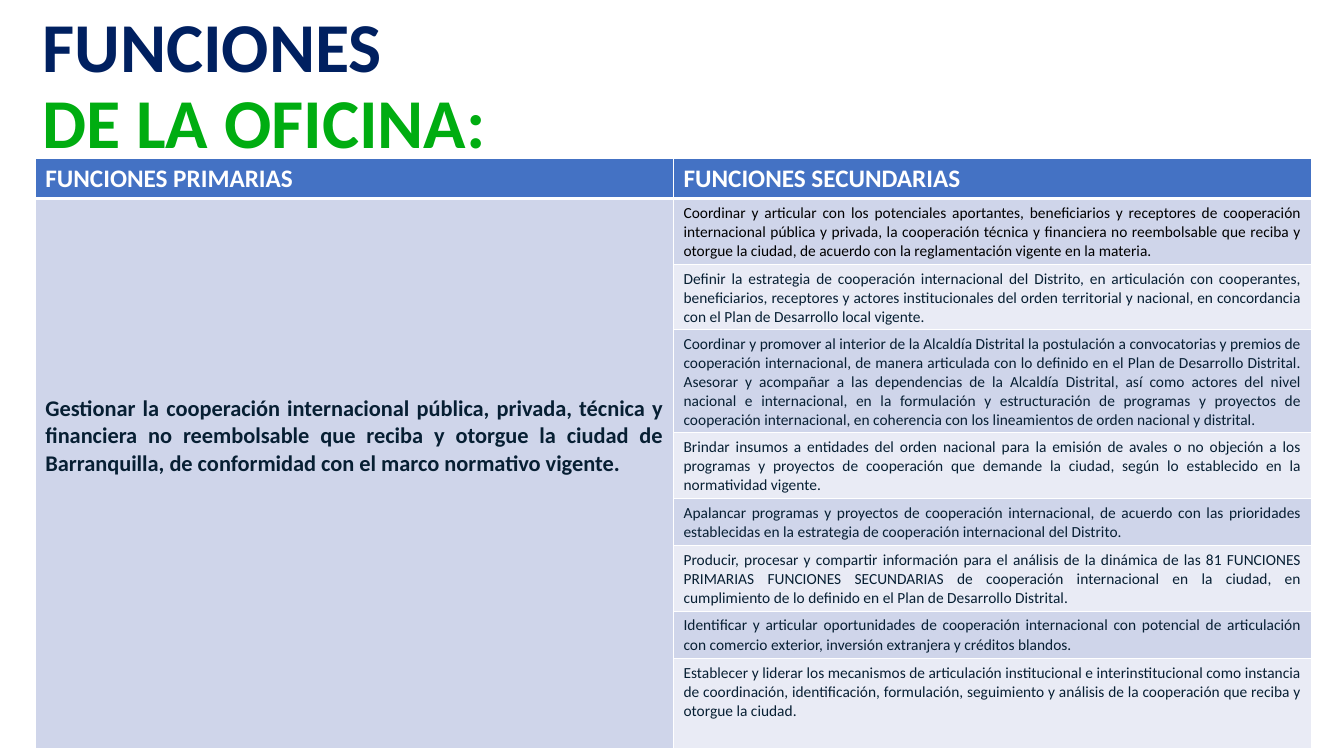
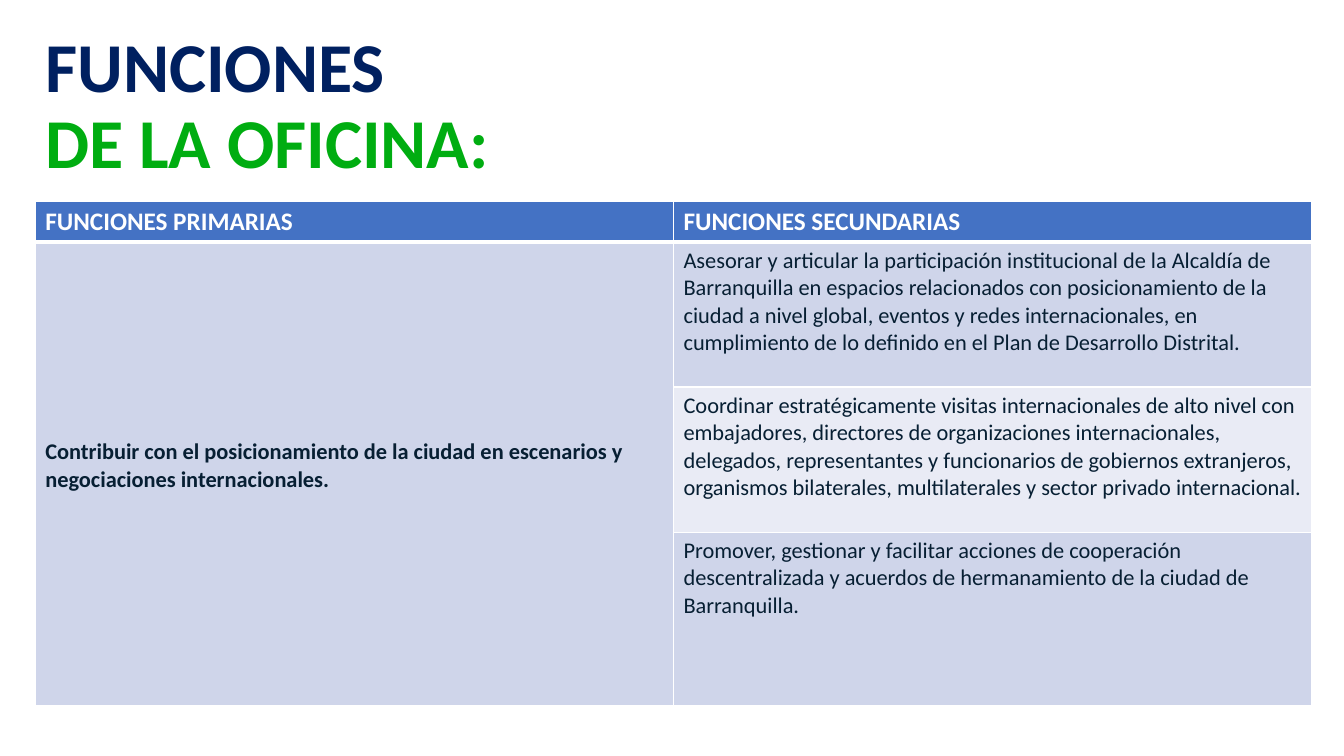
from lxml.etree import SubElement
from pptx import Presentation
from pptx.dml.color import RGBColor
from pptx.enum.text import MSO_ANCHOR, MSO_AUTO_SIZE, PP_ALIGN
from pptx.oxml.ns import qn
from pptx.util import Inches, Pt

TITLE_ONLY = 5
HEADERS = ("FUNCIONES PRIMARIAS", "FUNCIONES SECUNDARIAS")
HEADER_HEIGHT = 0.38

COOPERATION = (
    "Gestionar la cooperación internacional pública, privada, técnica y financiera no reembolsable que reciba y "
    "otorgue la ciudad de Barranquilla, de conformidad con el marco normativo vigente."
)
# Each secondary function: row height in inches, text
COOPERATION_TASKS = [
    (0.65, "Coordinar y articular con los potenciales aportantes, beneficiarios y receptores de cooperación "
           "internacional pública y privada, la cooperación técnica y financiera no reembolsable que reciba y "
           "otorgue la ciudad, de acuerdo con la reglamentación vigente en la materia."),
    (0.65, "Definir la estrategia de cooperación internacional del Distrito, en articulación con cooperantes, "
           "beneficiarios, receptores y actores institucionales del orden territorial y nacional, en concordancia "
           "con el Plan de Desarrollo local vigente."),
    (1.02, "Coordinar y promover al interior de la Alcaldía Distrital la postulación a convocatorias y premios de "
           "cooperación internacional, de manera articulada con lo definido en el Plan de Desarrollo Distrital. "
           "Asesorar y acompañar a las dependencias de la Alcaldía Distrital, así como actores del nivel nacional e "
           "internacional, en la formulación y estructuración de programas y proyectos de cooperación "
           "internacional, en coherencia con los lineamientos de orden nacional y distrital."),
    (0.65, "Brindar insumos a entidades del orden nacional para la emisión de avales o no objeción a los programas y "
           "proyectos de cooperación que demande la ciudad, según lo establecido en la normatividad vigente."),
    (0.47, "Apalancar programas y proyectos de cooperación internacional, de acuerdo con las prioridades "
           "establecidas en la estrategia de cooperación internacional del Distrito."),
    (0.65, "Producir, procesar y compartir información para el análisis de la dinámica de las 81 FUNCIONES PRIMARIAS "
           "FUNCIONES SECUNDARIAS de cooperación internacional en la ciudad, en cumplimiento de lo definido en el "
           "Plan de Desarrollo Distrital."),
    (0.47, "Identificar y articular oportunidades de cooperación internacional con potencial de articulación con "
           "comercio exterior, inversión extranjera y créditos blandos."),
    (0.89, "Establecer y liderar los mecanismos de articulación institucional e interinstitucional como instancia de "
           "coordinación, identificación, formulación, seguimiento y análisis de la cooperación que reciba y "
           "otorgue la ciudad."),
]

POSITIONING = "Contribuir con el posicionamiento de la ciudad en escenarios y negociaciones internacionales."
POSITIONING_TASKS = [
    (1.44, "Asesorar y articular la participación institucional de la Alcaldía de Barranquilla en espacios "
           "relacionados con posicionamiento de la ciudad a nivel global, eventos y redes internacionales, en "
           "cumplimiento de lo definido en el Plan de Desarrollo Distrital."),
    (1.44, "Coordinar estratégicamente visitas internacionales de alto nivel con embajadores, directores de "
           "organizaciones internacionales, delegados, representantes y funcionarios de gobiernos extranjeros, "
           "organismos bilaterales, multilaterales y sector privado internacional."),
    (1.72, "Promover, gestionar y facilitar acciones de cooperación descentralizada y acuerdos de hermanamiento de "
           "la ciudad de Barranquilla."),
]


def rgb(color):
    return RGBColor.from_string(color)


class Deck:
    FONT = "Calibri"
    NAVY, GREEN = "002060", "00AD11"
    INK, BLACK, WHITE = "071F33", "000000", "FFFFFF"
    HEADER_FILL = "4472C4"
    BANDS = ("CFD5EA", "E9EBF5")

    def __init__(self):
        self.presentation = Presentation()
        self.presentation.slide_width = Inches(13.33)
        self.presentation.slide_height = Inches(7.5)
        self.slide = None

    def add_slide(self):
        layout = self.presentation.slide_layouts[TITLE_ONLY]
        self.slide = self.presentation.slides.add_slide(layout)

    def add_run(self, paragraph, text, size, color, bold=False):
        run = paragraph.add_run()
        run.text = text
        font = run.font
        font.name, font.size, font.bold = self.FONT, Pt(size), bold
        font.color.rgb = rgb(color)

    def add_title(self, left, top):
        title = self.slide.shapes.title
        title.left, title.top = Inches(left), Inches(top)
        title.width, title.height = Inches(11.5), Inches(1.62)
        frame = title.text_frame
        frame.vertical_anchor = MSO_ANCHOR.MIDDLE
        frame.auto_size = MSO_AUTO_SIZE.SHAPE_TO_FIT_TEXT
        paragraph = frame.paragraphs[0]
        paragraph.alignment = PP_ALIGN.LEFT
        paragraph.line_spacing = 0.9
        self.add_run(paragraph, "FUNCIONES", 50, self.NAVY, True)
        paragraph.add_line_break()
        self.add_run(paragraph, "DE LA OFICINA:", 50, self.GREEN, True)

    def style_cell(self, cell, fill, top=1, bottom=1):
        """Fill the cell and give it white borders; top and bottom are widths in points."""
        properties = cell._tc.get_or_add_tcPr()
        for side, width in (("L", 1), ("R", 1), ("T", top), ("B", bottom)):
            border = SubElement(properties, qn(f"a:ln{side}"), w=str(Pt(width)))
            solid = SubElement(border, qn("a:solidFill"))
            SubElement(solid, qn("a:srgbClr"), val=self.WHITE)
        cell.fill.solid()
        cell.fill.fore_color.rgb = rgb(fill)

    def write_cell(self, cell, text, size, color, bold=False, align=PP_ALIGN.LEFT):
        paragraph = cell.text_frame.paragraphs[0]
        paragraph.alignment = align
        self.add_run(paragraph, text, size, color, bold)

    def add_functions(self, top, primary, tasks, task_size, align, first_color=INK):
        """Table with one primary function beside its secondary functions."""
        heights = [HEADER_HEIGHT] + [height for height, _ in tasks]
        table = self.slide.shapes.add_table(
            len(heights), 2, Inches(0.35), Inches(top), Inches(12.66), Inches(sum(heights))
        ).table
        for row, height in zip(table.rows, heights):
            row.height = Inches(height)
        for column, header in enumerate(HEADERS):
            cell = table.cell(0, column)
            self.style_cell(cell, self.HEADER_FILL, bottom=3)
            self.write_cell(cell, header, 18, self.WHITE, True)
        for row, (_, task) in enumerate(tasks, 1):
            top_border = 3 if row == 1 else 1
            self.style_cell(table.cell(row, 0), self.BANDS[0], top_border)
            cell = table.cell(row, 1)
            self.style_cell(cell, self.BANDS[(row - 1) % 2], top_border)
            color = first_color if row == 1 else self.INK
            self.write_cell(cell, task, task_size, color, align=align)
        primary_cell = table.cell(1, 0)
        primary_cell.merge(table.cell(len(tasks), 0))
        primary_cell.margin_top = Inches(1.95)
        self.write_cell(primary_cell, primary, 16, self.INK, True, align)


def main():
    deck = Deck()

    deck.add_slide()
    deck.add_title(0.32, 0.06)
    deck.add_functions(1.57, COOPERATION, COOPERATION_TASKS, 11, PP_ALIGN.JUSTIFY, Deck.BLACK)

    deck.add_slide()
    deck.add_title(0.35, 0.26)
    deck.add_functions(2, POSITIONING, POSITIONING_TASKS, 16, PP_ALIGN.LEFT)

    deck.presentation.save("out.pptx")


if __name__ == "__main__":
    main()
